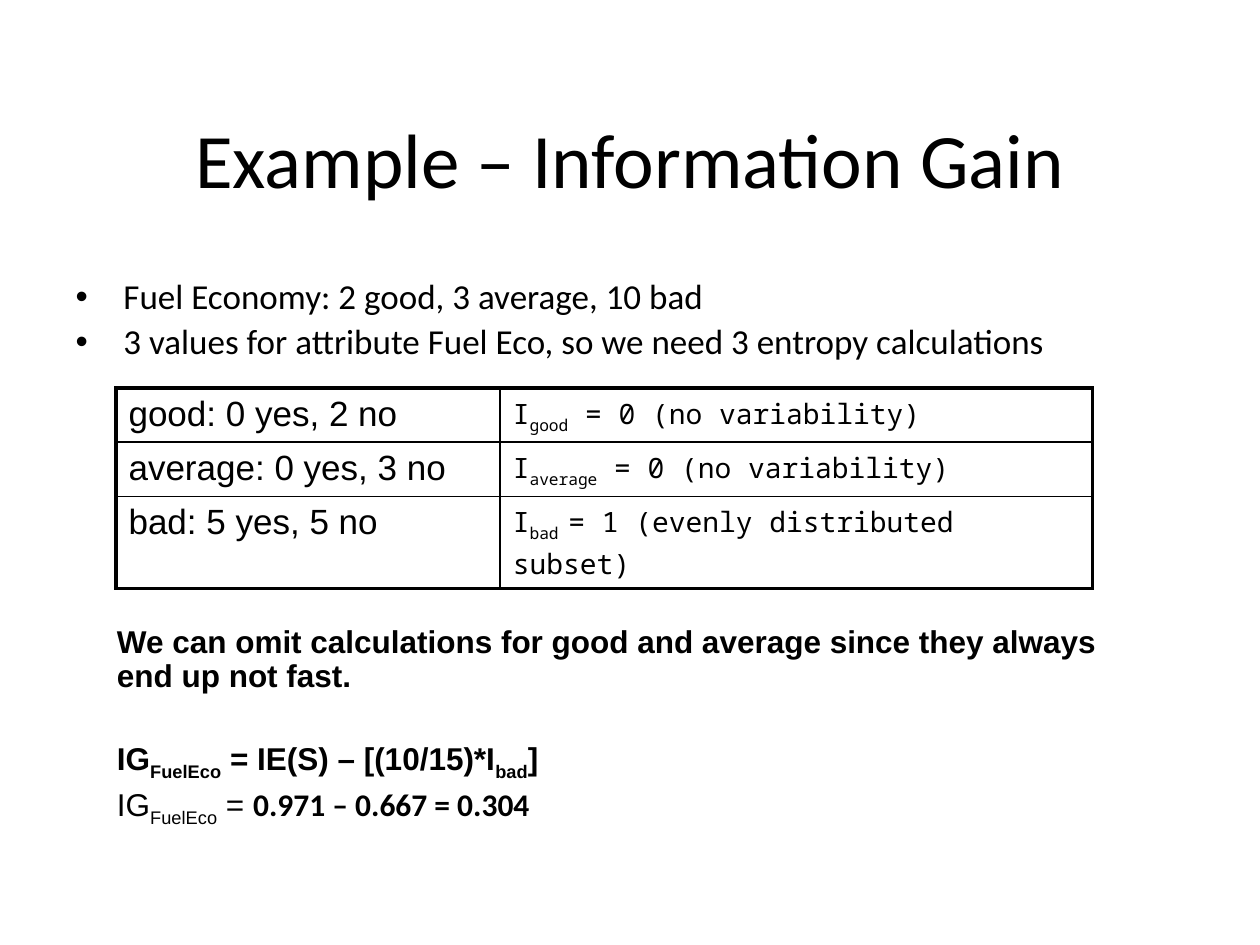
from lxml import etree
from pptx import Presentation
from pptx.dml.color import RGBColor
from pptx.enum.text import MSO_ANCHOR, MSO_AUTO_SIZE, PP_ALIGN
from pptx.oxml.ns import qn
from pptx.util import Inches, Pt

BLACK = RGBColor(0, 0, 0)
SANS, BODY, MONO = "Arial", "Calibri", "Noto Sans Mono"
MIDDLE, CENTER = MSO_ANCHOR.MIDDLE, PP_ALIGN.CENTER
GROW = MSO_AUTO_SIZE.SHAPE_TO_FIT_TEXT
THICK, THIN = 2.25, 1
SUB = {"sub": True}
BOLD = {"bold": True}
BOLD_SUB = {"bold": True, "sub": True}

TITLE = "Example – Information Gain"
BULLETS = [
    "Fuel Economy: 2 good, 3 average, 10 bad",
    "3 values for attribute Fuel Eco, so we need 3 entropy calculations",
]
# count of answers, subscript, rest of the entropy
ROWS = [
    ("good: 0 yes, 2 no", "good", " = 0 (no variability)"),
    ("average: 0 yes, 3 no", "average", " = 0 (no variability)"),
    ("bad: 5 yes, 5 no", "bad ", "= 1 (evenly distributed subset)"),
]
COLS = [3.05, 4.7]
HEIGHTS = [0.43, 0.43, 0.73]
# space before in points, then runs of (text, format)
NOTES = [
    (0, [("We can omit calculations for good and average since they always "
          "end up not fast.", BOLD)]),
    (26, [("IG", BOLD), ("FuelEco", BOLD_SUB), (" = IE(S) – [(10/15)*I", BOLD),
          ("bad", BOLD_SUB), ("]", BOLD)]),
    (4, [("IG", {}), ("FuelEco", SUB), (" = ", {}),
         ("0.971 – 0.667 = 0.304", {"bold": True, "font": BODY})]),
]


def place(shape, *box):
    shape.left, shape.top, shape.width, shape.height = map(Inches, box)


def add_run(para, text, size, font, bold=False, sub=False):
    run = para.add_run()
    run.text = text
    run.font.size, run.font.name, run.font.bold = Pt(size), font, bold
    run.font.color.rgb = BLACK
    if sub:
        run.font._element.set("baseline", "-25000")


def add_border(cell, side, width):
    props = cell._tc.get_or_add_tcPr()
    line = etree.SubElement(props, qn(f"a:ln{side}"), w=str(Pt(width)))
    fill = etree.SubElement(line, qn("a:solidFill"))
    etree.SubElement(fill, qn("a:srgbClr"), val=str(BLACK))


def add_paras(frame, count):
    """Return the first paragraph and as many new ones as needed."""
    return [frame.paragraphs[0]] + [frame.add_paragraph() for _ in range(count - 1)]


def fill_body(frame):
    for para, text in zip(add_paras(frame, len(BULLETS)), BULLETS):
        props = para._p.get_or_add_pPr()
        props.set("marL", str(Inches(0.38)))
        props.set("indent", str(-Inches(0.38)))
        para.line_spacing, para.space_before = 0.9, Pt(4)
        add_run(para, text, 20, BODY)


def fill_table(table):
    table.first_row = table.horz_banding = False
    for col, width in zip(table.columns, COLS):
        col.width = Inches(width)
    last_row, last_col = len(ROWS) - 1, len(COLS) - 1
    for r, (count, name, rest) in enumerate(ROWS):
        table.rows[r].height = Inches(HEIGHTS[r])
        left, right = table.cell(r, 0), table.cell(r, 1)
        add_run(left.text_frame.paragraphs[0], count, 20, SANS)
        para = right.text_frame.paragraphs[0]
        for text, sub in (("I", False), (name, True), (rest, False)):
            add_run(para, text, 16, MONO, sub=sub)
        for c, cell in enumerate((left, right)):
            outer = {"L": c == 0, "R": c == last_col,
                     "T": r == 0, "B": r == last_row}
            for side, edge in outer.items():
                add_border(cell, side, THICK if edge else THIN)
            cell.fill.background()


def fill_notes(frame):
    frame.word_wrap, frame.auto_size = True, GROW
    for para, (gap, runs) in zip(add_paras(frame, len(NOTES)), NOTES):
        para.line_spacing, para.space_before = 0.9, Pt(gap)
        for text, style in runs:
            add_run(para, text, 18, **{"font": SANS, **style})


def main():
    deck = Presentation()
    deck.slide_width, deck.slide_height = Inches(10), Inches(7.5)
    slide = deck.slides.add_slide(deck.slide_layouts[1])
    title, body = slide.placeholders

    place(title, 0.5, 0.5, 9, 1.5)
    title.text_frame.vertical_anchor = MIDDLE
    para = title.text_frame.paragraphs[0]
    para.alignment = CENTER
    add_run(para, TITLE, 44, BODY)

    place(body, 0.5, 2.17, 9, 1.17)
    fill_body(body.text_frame)

    grid = slide.shapes.add_table(
        len(ROWS), len(COLS), Inches(0.92), Inches(3.08),
        Inches(sum(COLS)), Inches(sum(HEIGHTS)))
    fill_table(grid.table)

    notes = slide.shapes.add_textbox(0, 0, 0, 0)
    place(notes, 0.83, 4.92, 8.42, 1.64)
    fill_notes(notes.text_frame)
    deck.save("out.pptx")


if __name__ == "__main__":
    main()
